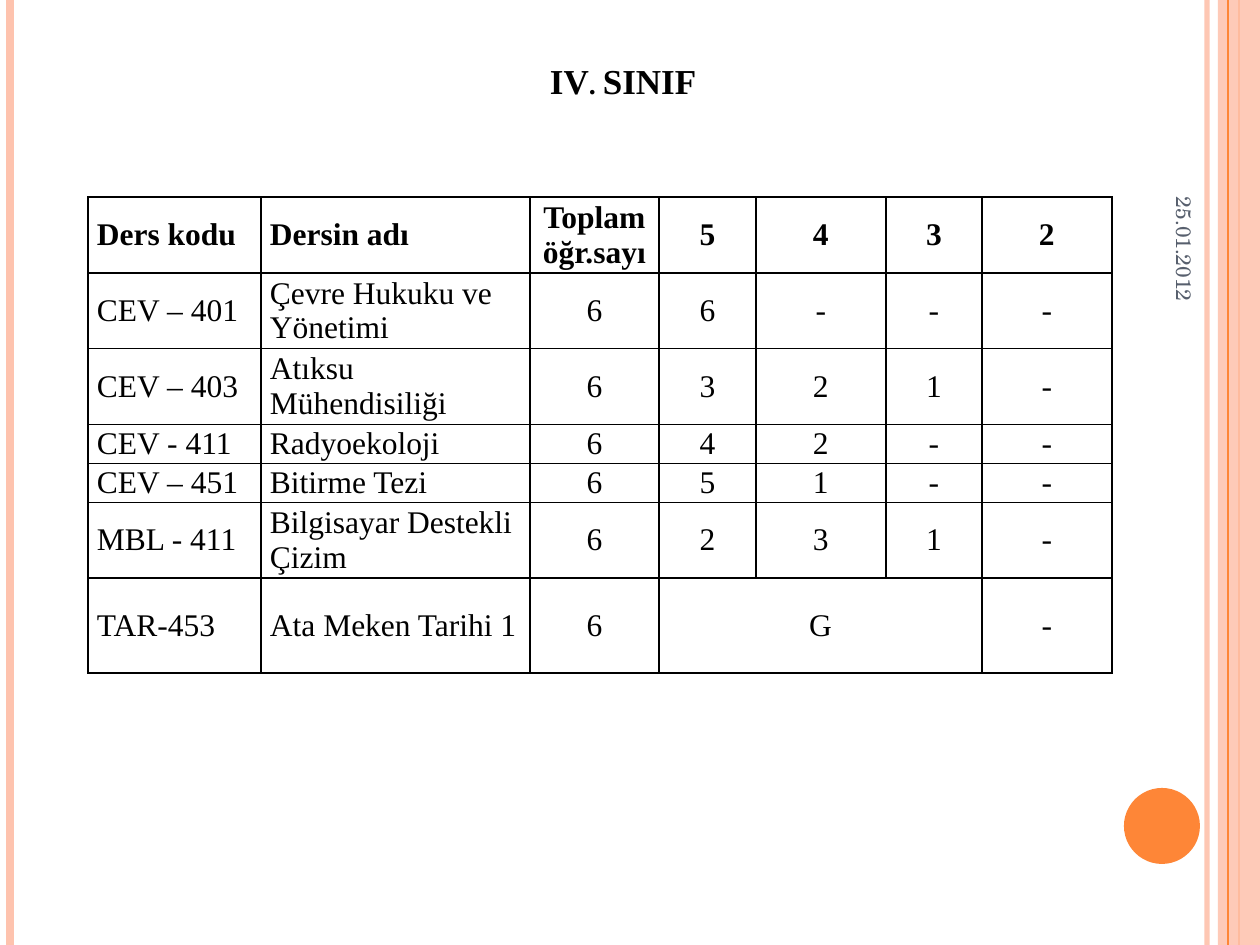
from lxml.etree import SubElement
from pptx import Presentation
from pptx.dml.color import RGBColor as RGB
from pptx.enum.shapes import MSO_CONNECTOR as LINE, MSO_SHAPE as SHAPE
from pptx.enum.text import MSO_ANCHOR as ANCHOR, MSO_AUTO_SIZE as AUTO, PP_ALIGN as ALIGN
from pptx.oxml.ns import qn
from pptx.util import Pt

PX = 914400 / 126
COLORS = {"peach": "FEC3AE", "orange": "FE8637", "slate": "575F6D", "black": "000000"}
SERIF = "Times New Roman"


def px(*lengths):
    return [round(length * PX) for length in lengths]


def write(frame, text, align, color, **font_values):
    paragraph = frame.paragraphs[0]
    paragraph.alignment = align
    run = paragraph.add_run()
    run.text = text
    for name, value in font_values.items():
        setattr(run.font, name, value)
    run.font.color.rgb = RGB.from_string(COLORS[color])
    return run


deck = Presentation()
deck.slide_width, deck.slide_height = px(1260, 945)
slide = deck.slides.add_slide(deck.slide_layouts[5])
shapes = slide.shapes

stripes = [
    (1207, "peach", 3, 93),
    (10, "peach", 4.5, 100),
    (1239, "orange", 1.5, 100),
    (1228, "orange", 0.75, 100),
]
bands = [
    (SHAPE.RECTANGLE, (1218, 0, 42, 945), "peach", 87),
    (SHAPE.OVAL, (1124, 788, 76, 76), "orange", 100),
]


def decorate_stripe(x, color, weight, opacity):
    stripe = shapes.add_connector(LINE.STRAIGHT, *px(x, 0, x, 945))
    stripe.line.color.rgb = RGB.from_string(COLORS[color])
    stripe.line.width = Pt(weight)
    properties = stripe._element.spPr
    SubElement(properties, qn("a:effectLst"))
    if opacity < 100:
        tint = properties.find(".//" + qn("a:srgbClr"))
        SubElement(tint, qn("a:alpha")).set("val", str(opacity * 1000))


for stripe in stripes[:3]:
    decorate_stripe(*stripe)

for kind, place, color, opacity in bands:
    band = shapes.add_shape(kind, *px(*place))
    band.shadow.inherit = False
    band.fill.solid()
    band.fill.fore_color.rgb = RGB.from_string(COLORS[color])
    band.line.fill.background()
    if opacity < 100:
        tint = band._element.spPr.find(".//" + qn("a:srgbClr"))
        SubElement(tint, qn("a:alpha")).set("val", str(opacity * 1000))
    if kind == SHAPE.RECTANGLE:
        decorate_stripe(*stripes[3])

heading = shapes.title
heading.left, heading.top, heading.width, heading.height = px(63, 38, 1029, 70)
heading_format = {
    "auto_size": AUTO.NONE,
    "word_wrap": True,
    "vertical_anchor": ANCHOR.BOTTOM,
    "margin_left": px(104)[0],
}
for name, value in heading_format.items():
    setattr(heading.text_frame, name, value)
heading_run = write(heading.text_frame, "IV. SINIF", ALIGN.CENTER, "black",
                    name=SERIF, size=Pt(20), bold=True)
heading_run._r.get_or_add_rPr().set("cap", "small")

date = shapes.add_textbox(*px(1046, 149, 277, 53))
date.rotation = 90
date.text_frame.word_wrap = True
date.text_frame.vertical_anchor = ANCHOR.MIDDLE
write(date.text_frame, "25.01.2012", ALIGN.RIGHT, "slate",
      name="TeX Gyre Schola", size=Pt(12))

courses = [
    ["Ders kodu", "Dersin adı", "Toplam öğr.sayı", "5", "4", "3", "2"],
    ["CEV – 401", "Çevre Hukuku ve Yönetimi", "6", "6", "-", "-", "-"],
    ["CEV – 403", "Atıksu Mühendisiliği", "6", "3", "2", "1", "-"],
    ["CEV - 411", "Radyoekoloji", "6", "4", "2", "-", "-"],
    ["CEV – 451", "Bitirme Tezi", "6", "5", "1", "-", "-"],
    ["MBL - 411", "Bilgisayar Destekli Çizim", "6", "2", "3", "1", "-"],
    ["TAR-453", "Ata Meken Tarihi 1", "6", "G", "", "", "-"],
]
column_widths = [173, 269, 129, 97, 130, 96, 130]
row_heights = [76, 70, 70, 39, 39, 70, 95]
grades = shapes.add_table(len(courses), len(column_widths),
                          *px(88, 197, sum(column_widths), sum(row_heights))).table
grades.first_row = False
grades.horz_banding = False
for column, width in zip(grades.columns, px(*column_widths)):
    column.width = width
for row, height in zip(grades.rows, px(*row_heights)):
    row.height = height

side_margin = px(9)[0]
cell_format = {
    "margin_left": side_margin,
    "margin_right": side_margin,
    "margin_top": 0,
    "margin_bottom": 0,
    "vertical_anchor": ANCHOR.MIDDLE,
}
for r, course in enumerate(courses):
    for c, text in enumerate(course):
        cell = grades.cell(r, c)
        for name, value in cell_format.items():
            setattr(cell, name, value)
        for side in ("lnL", "lnR", "lnT", "lnB"):
            border = SubElement(cell._tc.get_or_add_tcPr(), qn("a:" + side), w=str(Pt(1)))
            border_fill = SubElement(border, qn("a:solidFill"))
            SubElement(border_fill, qn("a:srgbClr"), val=COLORS["black"])
        cell.fill.background()
        if text:
            write(cell.text_frame, text, ALIGN.LEFT if c < 2 else ALIGN.CENTER, "black",
                  name=SERIF, size=Pt(18), bold=r == 0)
grades.cell(6, 3).merge(grades.cell(6, 5))

deck.save("out.pptx")
